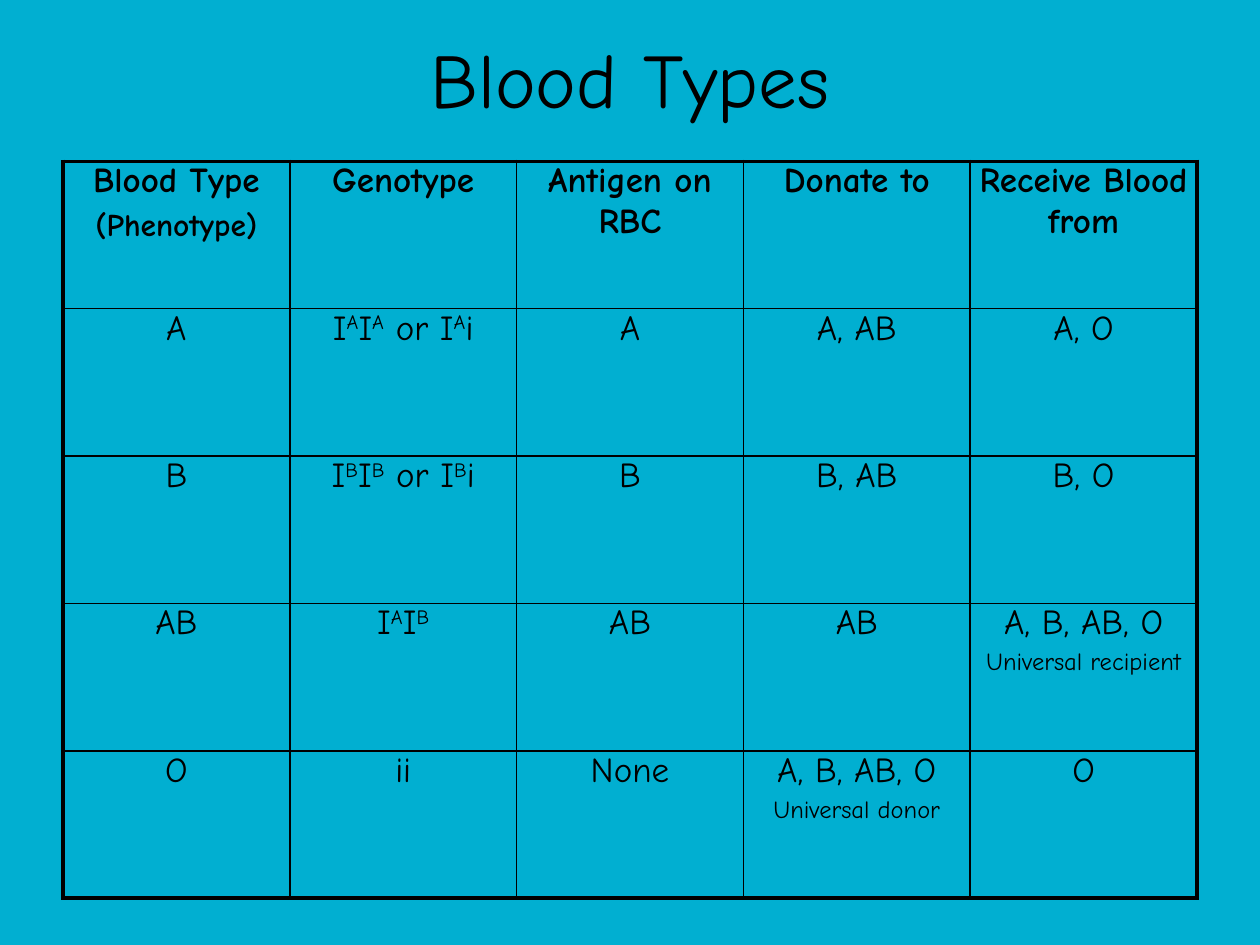
"""Build a slide with a table of blood types, genotypes and compatibility."""
from lxml.etree import SubElement
from pptx import Presentation
from pptx.dml.color import RGBColor
from pptx.enum.text import MSO_ANCHOR, PP_ALIGN
from pptx.oxml.ns import qn
from pptx.util import Pt

FONT = "Comic Neue"
INK = "000000"
BACKGROUND = "01AFD1"
TITLE = "Blood Types"
SUPERSCRIPT_MARK = "^"
HEADER = [
    ["Blood Type", "(Phenotype)"],
    ["Genotype"],
    ["Antigen on RBC"],
    ["Donate to"],
    ["Receive Blood from"],
]
BODY = [
    [["A"], ["I^A^I^A^ or I^A^i"], ["A"], ["A, AB"], ["A, O"]],
    [["B"], ["I^B^I^B^ or I^B^i"], ["B"], ["B, AB"], ["B, O"]],
    [["AB"], ["I^A^I^B^"], ["AB"], ["AB"], ["A, B, AB, O", "Universal recipient"]],
    [["O"], ["ii"], ["None"], ["A, B, AB, O", "Universal donor"], ["O"]],
]
ROWS = [HEADER] + BODY
LEFT, TOP, WIDTH, HEIGHT = 36, 92.16, 648, 421.2
OUTER_LINE, INNER_LINE = 2.25, 1


def color(value):
    return RGBColor.from_string(value)


def style_font(font, size, bold=False):
    font.name = FONT
    font.size = Pt(size)
    font.bold = bold
    font.color.rgb = color(INK)


def write_line(paragraph, text, size, bold):
    paragraph.alignment = PP_ALIGN.CENTER
    for index, part in enumerate(text.split(SUPERSCRIPT_MARK)):
        if part:
            run = paragraph.add_run()
            run.text = part
            style_font(run.font, size, bold)
            if index % 2:
                run.font._element.set("baseline", "30000")


def add_border(cell, side, width):
    properties = cell._tc.get_or_add_tcPr()
    line = SubElement(properties, qn(f"a:ln{side}"), w=str(Pt(width)))
    fill = SubElement(line, qn("a:solidFill"))
    SubElement(fill, qn("a:srgbClr"), val=INK)


def fill_cell(cell, lines, is_header, outer_sides):
    cell.margin_left = cell.margin_right = cell.margin_top = cell.margin_bottom = 0
    for side in "LRTB":
        add_border(cell, side, OUTER_LINE if side in outer_sides else INNER_LINE)
    cell.fill.background()
    note_size, note_gap = (18, 3.6) if is_header else (14, 2.8)
    frame = cell.text_frame
    write_line(frame.paragraphs[0], lines[0], 20, is_header)
    for note in lines[1:]:
        paragraph = frame.add_paragraph()
        paragraph.space_before = Pt(note_gap)
        write_line(paragraph, note, note_size, is_header)


def add_title(slide):
    shape = slide.shapes.add_textbox(Pt(36), Pt(12.24), Pt(648), Pt(64.08))
    frame = shape.text_frame
    frame.word_wrap = True
    frame.vertical_anchor = MSO_ANCHOR.MIDDLE
    frame.text = TITLE
    paragraph = frame.paragraphs[0]
    paragraph.alignment = PP_ALIGN.CENTER
    style_font(paragraph.runs[0].font, 44)


def add_blood_table(slide):
    row_count, column_count = len(ROWS), len(HEADER)
    table = slide.shapes.add_table(
        row_count, column_count, Pt(LEFT), Pt(TOP), Pt(WIDTH), Pt(HEIGHT)
    ).table
    table.first_row = table.horz_banding = False
    for column in table.columns:
        column.width = Pt(WIDTH / column_count)
    for row in table.rows:
        row.height = Pt(HEIGHT / row_count)
    for r, row in enumerate(ROWS):
        for c, lines in enumerate(row):
            edges = {"L": c == 0, "R": c == column_count - 1,
                     "T": r == 0, "B": r == row_count - 1}
            outer_sides = [side for side, is_outer in edges.items() if is_outer]
            fill_cell(table.cell(r, c), lines, r == 0, outer_sides)


def main():
    presentation = Presentation()
    presentation.slide_width, presentation.slide_height = Pt(720), Pt(540)
    slide = presentation.slides.add_slide(presentation.slide_layouts[6])
    slide.background.fill.solid()
    slide.background.fill.fore_color.rgb = color(BACKGROUND)
    add_title(slide)
    add_blood_table(slide)
    presentation.save("out.pptx")


if __name__ == "__main__":
    main()
